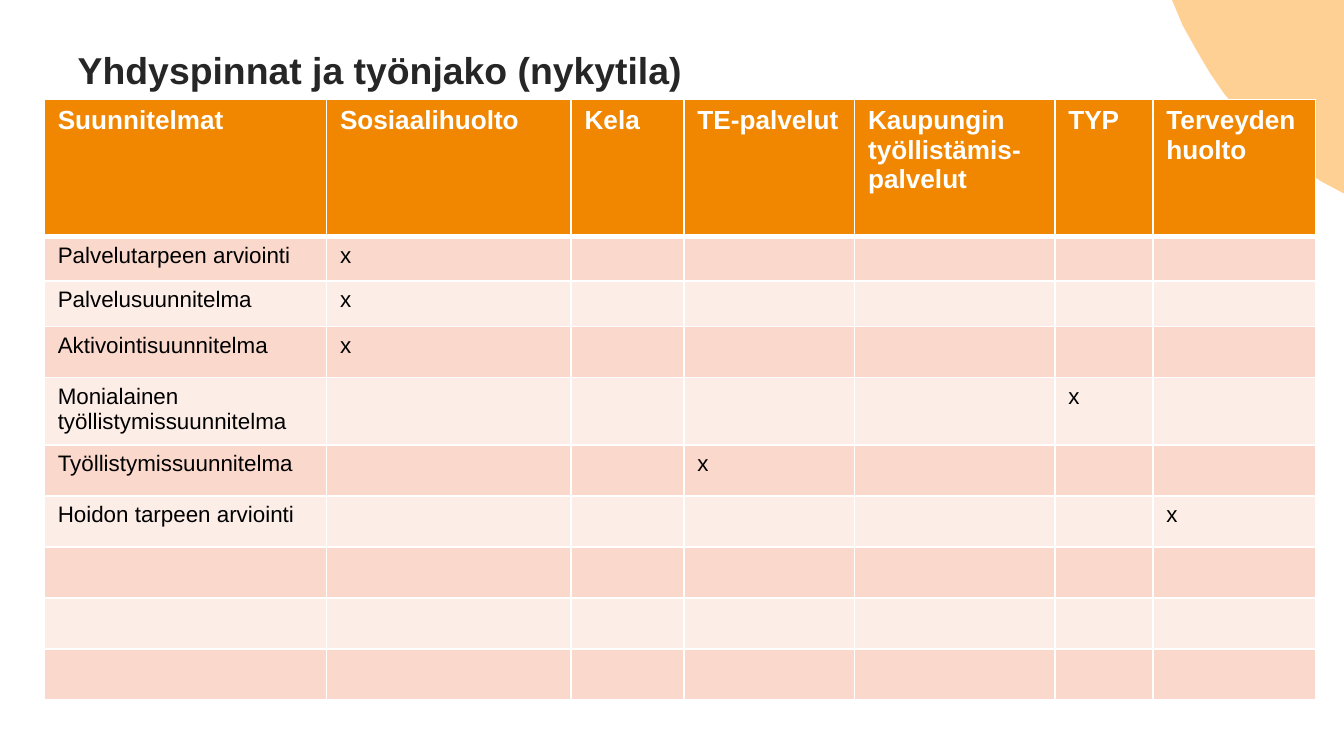
from lxml.etree import SubElement
from pptx import Presentation
from pptx.dml.color import RGBColor
from pptx.enum.text import MSO_ANCHOR
from pptx.oxml.ns import qn
from pptx.util import Inches, Pt

FONT = "Arial"
COLORS = {
    "white": "FFFFFF", "peach": "FFD093", "title": "262626", "black": "000000",
    "head": "F18700", "odd": "FAD9CC", "even": "FCEDE7",
}
CURVE = [
    (8.72, 0), (8.8, 0.19), (8.9, 0.37), (9, 0.54), (9.11, 0.7), (9.24, 0.85),
    (9.38, 0.99), (9.52, 1.12), (9.67, 1.24), (9.83, 1.35), (10, 1.44), (10, 0),
]
HEADS = [
    "Suunnitelmat", "Sosiaalihuolto", "Kela", "TE-palvelut",
    "Kaupungin työllistämis-palvelut", "TYP", "Terveydenhuolto",
]
# Each plan with the column that holds its mark
PLANS = [
    ("Palvelutarpeen arviointi", 1),
    ("Palvelusuunnitelma", 1),
    ("Aktivointisuunnitelma", 1),
    ("Monialainen työllistymissuunnitelma", 5),
    ("Työllistymissuunnitelma", 3),
    ("Hoidon tarpeen arviointi", 6),
]
BLANKS = 3
WIDTHS = [2.1, 1.82, 0.84, 1.27, 1.49, 0.73, 1.21]
HEIGHTS = [1.02, 0.33, 0.34, 0.38, 0.47] + [0.38] * 5


def color(name):
    return RGBColor.from_string(COLORS[name])


def write(frame, text, size=12, bold=False, ink="black"):
    line = frame.paragraphs[0]
    if not text:
        # An empty cell still needs a text size, or its row grows
        SubElement(line._p, qn("a:endParaRPr"), sz=str(size * 100))
        return
    run = line.add_run()
    run.text = text
    font = run.font
    font.name, font.size, font.bold = FONT, Pt(size), bold
    font.color.rgb = color(ink)


def add_curve(slide):
    points = [(Inches(x), Inches(y)) for x, y in CURVE]
    build = slide.shapes.build_freeform(*points[0])
    build.add_line_segments(points[1:], close=True)
    shape = build.convert_to_shape()
    shape.shadow.inherit = False
    shape.fill.solid()
    shape.fill.fore_color.rgb = color("peach")
    shape.line.fill.background()


def add_title(slide, text):
    box = slide.shapes.add_textbox(
        Inches(0.48), Inches(0.12), Inches(8.46), Inches(0.61))
    frame = box.text_frame
    frame.word_wrap = True
    frame.vertical_anchor = MSO_ANCHOR.BOTTOM
    write(frame, text, size=20, bold=True, ink="title")


def paint(cell, fill, edges):
    props = cell._tc.get_or_add_tcPr()
    for side, width in edges.items():
        edge = SubElement(props, qn(f"a:{side}"), w=str(Pt(width)))
        solid = SubElement(edge, qn("a:solidFill"))
        SubElement(solid, qn("a:srgbClr"), val=COLORS["white"])
    cell.fill.solid()
    cell.fill.fore_color.rgb = color(fill)


def add_grid(slide, rows):
    table = slide.shapes.add_table(
        len(rows), len(WIDTHS), Inches(0.33), Inches(0.74),
        Inches(sum(WIDTHS)), Inches(sum(HEIGHTS))).table
    for col, width in zip(table.columns, WIDTHS):
        col.width = Inches(width)
    for row, height in zip(table.rows, HEIGHTS):
        row.height = Inches(height)
    for r, texts in enumerate(rows):
        head = r == 0
        fill = "head" if head else ("odd" if r % 2 else "even")
        edges = {"lnL": 1, "lnR": 1, "lnT": 3 if r == 1 else 1,
                 "lnB": 3 if head else 1}
        for c, text in enumerate(texts):
            cell = table.cell(r, c)
            paint(cell, fill, edges)
            write(cell.text_frame, text, size=14 if head else 12,
                  bold=head, ink="white" if head else "black")


def main():
    deck = Presentation()
    # Wide format, 16 to 9
    deck.slide_width = Inches(10)
    deck.slide_height = deck.slide_width * 9 // 16
    slide = deck.slides.add_slide(deck.slide_layouts[6])

    # Corner shape and title
    add_curve(slide)
    add_title(slide, "Yhdyspinnat ja työnjako (nykytila)")

    # Table of plans by service
    count = len(HEADS)
    rows = [HEADS]
    for plan, mark in PLANS:
        rows.append([plan] + ["x" if c == mark else "" for c in range(1, count)])
    rows += [[""] * count] * BLANKS
    add_grid(slide, rows)

    deck.save("out.pptx")


if __name__ == "__main__":
    main()
